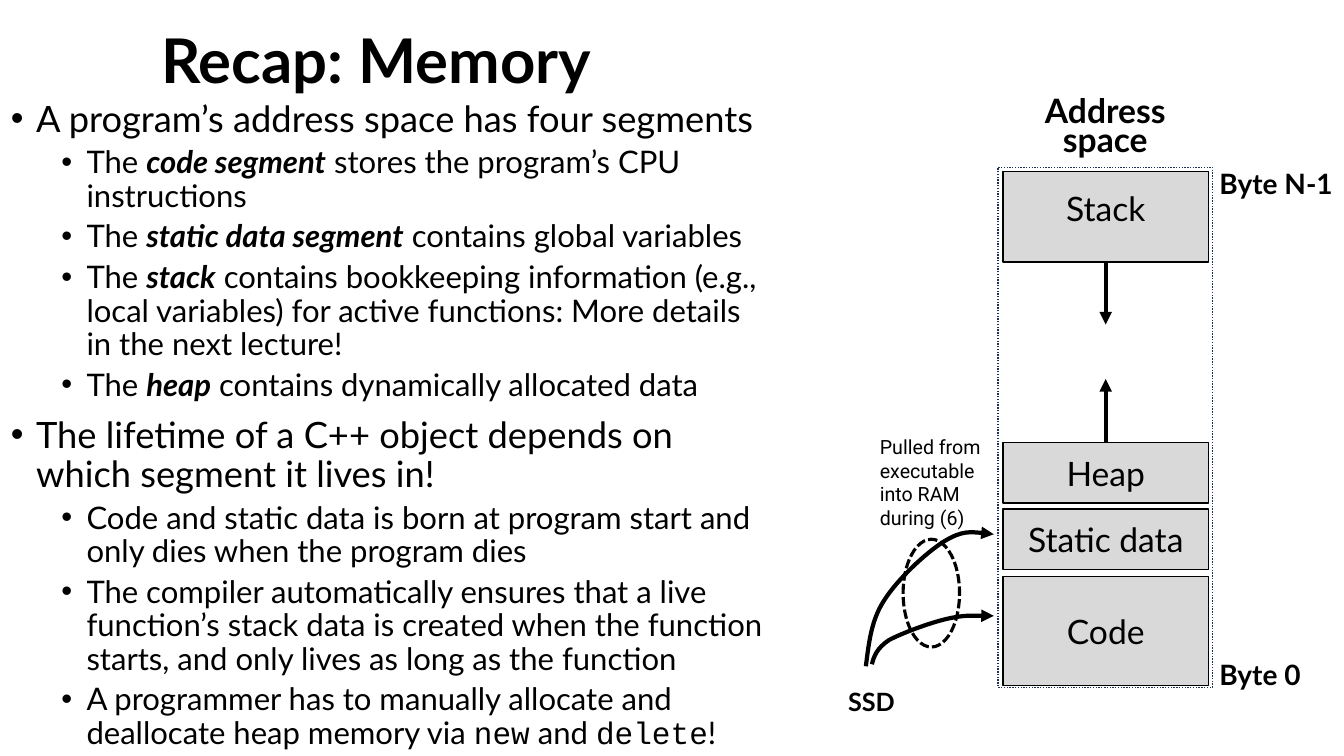
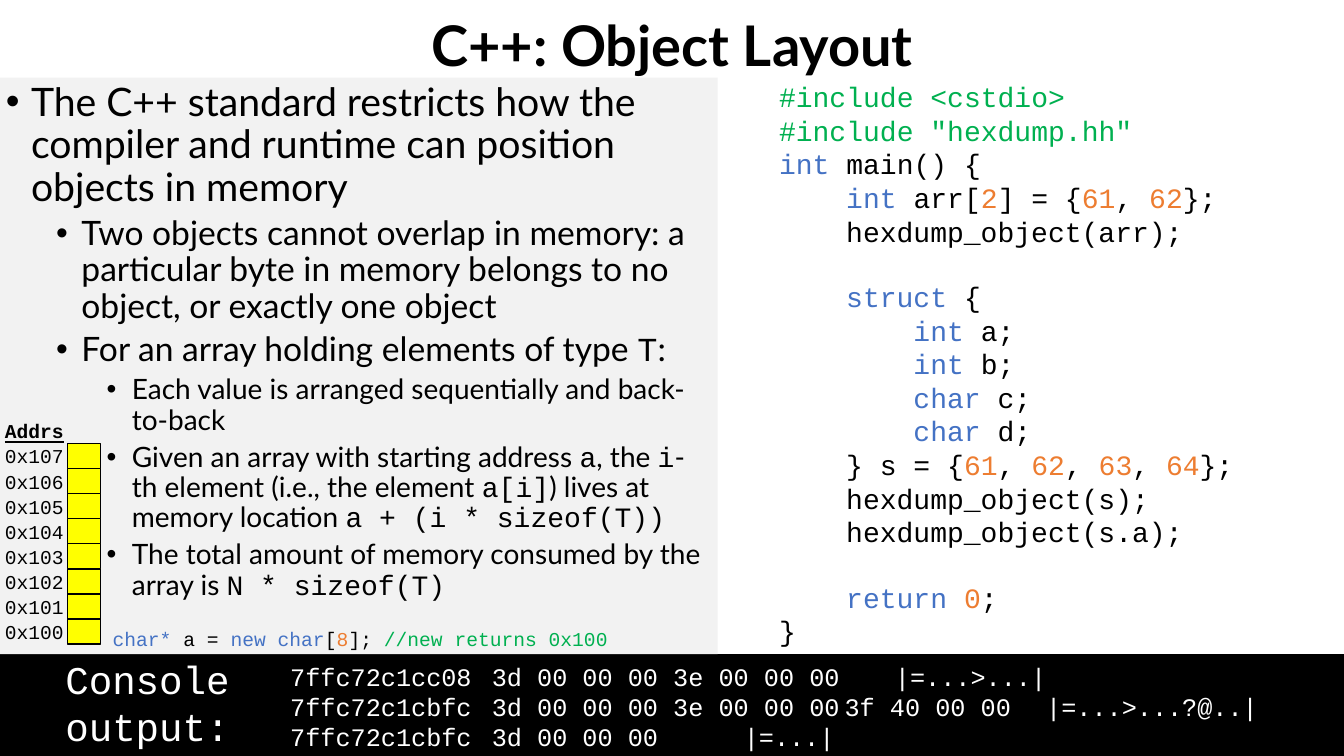
from lxml.etree import SubElement
from pptx import Presentation
from pptx.dml.color import RGBColor
from pptx.enum.dml import MSO_LINE
from pptx.enum.shapes import MSO_CONNECTOR, MSO_SHAPE
from pptx.enum.text import MSO_ANCHOR, PP_ALIGN
from pptx.oxml.ns import qn
from pptx.util import Pt

COLORS = {
    "black": "000000", "white": "FFFFFF", "segment": "D9D9D9", "panel": "F2F2F2",
    "navy": "1E3256", "cell": "FFFF00", "keyword": "4472C4", "number": "ED7D31",
    "comment": "00B050",
}
SANS, MONO = "Lato", "Courier New"
RUN_STYLES = {
    "*": {"bold": True, "italic": True},
    "=": {"font": MONO},
    "k": {"color": "keyword"},
    "n": {"color": "number"},
    "c": {"color": "comment"},
}


def write(frame, text, size, font=SANS, color="black", bold=False, underline=False,
          align=PP_ALIGN.LEFT, spacing=None, before=0, left=0, bullet=False, tabs=()):
    paragraph = frame.add_paragraph() if frame.text else frame.paragraphs[0]
    paragraph.alignment = align
    paragraph.space_before = Pt(before)
    if spacing:
        paragraph.line_spacing = spacing
    properties = paragraph._p.get_or_add_pPr()
    properties.set("marL", str(Pt(left)))
    properties.set("indent", str(Pt(-18 if bullet else 0)))
    if bullet:
        SubElement(properties, qn("a:buFont"), typeface="Arial")
        SubElement(properties, qn("a:buChar"), char="•")
    if tabs:
        stops = SubElement(properties, qn("a:tabLst"))
        for stop in tabs:
            SubElement(stops, qn("a:tab"), pos=str(Pt(stop)), algn="l")
    for index, part in enumerate(text.split("`")):
        if not part:
            continue
        style = RUN_STYLES[part[0]] if index % 2 else {}
        run = paragraph.add_run()
        run.text = part[1:] if index % 2 else part
        run.font.size = Pt(size)
        run.font.name = style.get("font", font)
        run.font.bold = style.get("bold", bold)
        run.font.italic = style.get("italic", False)
        run.font.underline = underline
        run.font.color.rgb = RGBColor.from_string(COLORS[style.get("color", color)])


def box(slide, left, top, width, height, kind=None, fill=None, line=None,
        weight=1, dash=None, anchor=MSO_ANCHOR.TOP):
    place = Pt(left), Pt(top), Pt(width), Pt(height)
    if kind is None:
        shape = slide.shapes.add_textbox(*place)
    else:
        shape = slide.shapes.add_shape(kind, *place)
        shape.shadow.inherit = False
        if fill:
            shape.fill.solid()
            shape.fill.fore_color.rgb = RGBColor.from_string(COLORS[fill])
        else:
            shape.fill.background()
        if line:
            shape.line.color.rgb = RGBColor.from_string(COLORS[line])
            shape.line.width = Pt(weight)
            shape.line.dash_style = dash
        else:
            shape.line.fill.background()
    shape.text_frame.word_wrap = True
    shape.text_frame.vertical_anchor = anchor
    return shape.text_frame


deck = Presentation()
deck.slide_width, deck.slide_height = Pt(960), Pt(540)
blank = deck.slide_layouts[6]
memory, layout = [deck.slides.add_slide(blank) for _ in range(2)]

memory_points = [
    (0, "A program’s address space has four segments"),
    (1, "The `*code segment` stores the program’s CPU instructions"),
    (1, "The `*static data segment` contains global variables"),
    (1, "The `*stack` contains bookkeeping information (e.g., local variables) "
        "for active functions: More details in the next lecture!"),
    (1, "The `*heap` contains dynamically allocated data"),
    (0, "The lifetime of a C++ object depends on which segment it lives in!"),
    (1, "Code and static data is born at program start and only dies when the program dies"),
    (1, "The compiler automatically ensures that a live function’s stack data is created "
        "when the function starts, and only lives as long as the function"),
    (1, "A programmer has to manually allocate and deallocate heap memory via "
        "`=new` and `=delete`!"),
]
layout_points = [
    (0, "The C++ standard restricts how the compiler and runtime can position objects in memory"),
    (1, "Two objects cannot overlap in memory: a particular byte in memory belongs to "
        "no object, or exactly one object"),
    (1, "For an array holding elements of type `=T`:"),
    (2, "Each value is arranged sequentially and back-to-back"),
    (2, "Given an array with starting address `=a`, the `=i`-th element (i.e., the element "
        "`=a[i]`) lives at memory location `=a + (i * sizeof(T))`"),
    (2, "The total amount of memory consumed by the array is `=N * sizeof(T)`"),
]

box(layout, -2.9, 467.3, 962.9, 72.7, MSO_SHAPE.RECTANGLE, fill="black")
memory_body = box(memory, 0.7, 68.4, 555.8, 478.8)
layout_body = box(layout, -2.9, 55.4, 515.5, 411.9, MSO_SHAPE.RECTANGLE, fill="panel")
for body, points, sizes in [(memory_body, memory_points, (25.9, 22.2)),
                            (layout_body, layout_points, (28, 24, 20))]:
    for level, text in points:
        write(body, text, sizes[level], spacing=0.9, before=5 if level else 10,
              left=18 + 36 * level, bullet=True)

for slide, place, heading, size in [
    (memory, (13, 7.2, 512, 76.3), "Recap: Memory", 44),
    (layout, (0, -2.9, 960, 74.9), "C++: Object Layout", 40),
]:
    write(box(slide, *place, anchor=MSO_ANCHOR.MIDDLE), heading, size, bold=True,
          align=PP_ALIGN.CENTER, spacing=0.9)

for place, label, size, spacing in [
    ((838.8, 465.8, 122.4, 31.7), "Byte 0", 20, None),
    ((850.3, 115.2, 122.4, 31.7), "Byte N-1", 20, None),
    ((712.8, 68.4, 153.4, 49.7), "Address space", 24, Pt(21)),
    ((592.6, 486.7, 59.8, 28.8), "SSD", 18, None),
]:
    write(box(memory, *place), label, size, bold=True, align=PP_ALIGN.CENTER, spacing=spacing)

box(memory, 712.8, 119.5, 153.4, 371.5, MSO_SHAPE.RECTANGLE, line="navy",
    dash=MSO_LINE.ROUND_DOT)
for segment, top, height, spacing in [("Stack", 122.4, 64.8, Pt(16)), ("Heap", 316.1, 43.2, None),
                                      ("Static data", 363.6, 43.2, None),
                                      ("Code", 411.8, 77.8, None)]:
    write(box(memory, 716.4, top, 146.9, height, MSO_SHAPE.RECTANGLE, fill="segment",
              line="black", anchor=MSO_ANCHOR.MIDDLE),
          segment, 24, align=PP_ALIGN.CENTER, spacing=spacing)

arrows = []
for start, end in [(187.2, 231.8), (316.1, 270.7)]:
    arrows.append(memory.shapes.add_connector(
        MSO_CONNECTOR.STRAIGHT, Pt(789.8), Pt(start), Pt(789.8), Pt(end)))
for start, *controls in [
    [(622.8, 474.5), (624.2, 468.7), (626.4, 463), (635, 457.2), (644.4, 452.2),
     (663.8, 445), (676.1, 442.1), (688.9, 439.2), (699.1, 439.9), (709.9, 439.9)],
    [(618.5, 475.9), (620.6, 460.1), (622.1, 443.5), (631.4, 429.1), (640.8, 414),
     (661.7, 394.6), (674.6, 386.6), (687.6, 378.7), (699.1, 380.2), (709.9, 381.6)],
]:
    builder = memory.shapes.build_freeform(Pt(start[0]), Pt(start[1]))
    builder.add_line_segments([(Pt(x), Pt(y)) for x, y in controls], close=False)
    load = builder.convert_to_shape()
    load.fill.background()
    outline = next(load.element.iter(qn("a:path")))
    segments = outline.findall(qn("a:lnTo"))
    for first in range(0, len(segments), 3):
        curve = SubElement(outline, qn("a:cubicBezTo"))
        for segment in segments[first:first + 3]:
            curve.append(segment[0])
            outline.remove(segment)
    arrows.append(load)
for arrow in arrows:
    arrow.line.color.rgb = RGBColor.from_string(COLORS["black"])
    arrow.line.width = Pt(3)
    SubElement(next(arrow.element.iter(qn("a:ln"))), qn("a:tailEnd"), type="triangle")
    SubElement(arrow.element.spPr, qn("a:effectLst"))

write(box(memory, 621.4, 307.4, 91.4, 74.9), "Pulled from executable into RAM during (6)",
      14, font="Roboto")
box(memory, 645.1, 385.2, 40.3, 77, MSO_SHAPE.OVAL, line="black", weight=2.25,
    dash=MSO_LINE.SQUARE_DOT)

program = [
    (0, 0, "`c#include <cstdio>`"),
    (0, 0, '`c#include "hexdump.hh"`'),
    (0, 0, "`kint` main() {"),
    (1, 0, "`kint `arr[`n2`] = {`n61`, `n62`};"),
    (1, 0, "hexdump_object(arr);"),
    (1, 1, "`kstruct` {"),
    (2, 0, "`kint` a;"),
    (2, 0, "`kint` b;"),
    (2, 0, "`kchar` c;"),
    (2, 0, "`kchar` d;"),
    (1, 0, "} s = {`n61`, `n62`, `n63`, `n64`};"),
    (1, 0, "hexdump_object(s);"),
    (1, 0, "hexdump_object(s.a);"),
    (1, 1, "`kreturn `n0`;".replace("`n0", "``n0")),
    (0, 0, "}"),
]
listing = box(layout, 549.4, 53.3, 406.1, 419)
for depth, skipped, text in program:
    write(listing, text, 20, font=MONO, left=48 * depth, before=22.7 * skipped)

write(box(layout, 39.6, 464.4, 139.7, 74.9), "Console output:", 28, font=MONO, color="white")
console = box(layout, 200.2, 468.7, 745.9, 72.7)
for text in ["7ffc72c1cc08\t3d 00 00 00 3e 00 00 00\t\t|=...>...|",
             "7ffc72c1cbfc\t3d 00 00 00 3e 00 00 00\t3f 40 00 00\t|=...>...?@..|",
             "7ffc72c1cbfc\t3d 00 00 00\t\t|=...|"]:
    write(console, text, 18, font=MONO, color="white", tabs=(151.2, 421.2, 561.6))

for offset in range(8):
    rise = 17.9 * offset
    box(layout, 48.2, 442.1 - rise, 23.8, 17.9, MSO_SHAPE.RECTANGLE, fill="cell", line="black")
    write(box(layout, -3.6, 439.2 - rise, 58.3, 24.5), f"0x10{offset}", 14, font=MONO)
write(box(layout, -3.6, 295.9, 58.3, 24.5), "Addrs", 14, font=MONO, bold=True, underline=True)
write(box(layout, 73.4, 444.2, 414.7, 24.5),
      "`kchar*` a = `knew char`[`n8`]; `c//new returns 0x100`", 14, font=MONO)

deck.save("out.pptx")
